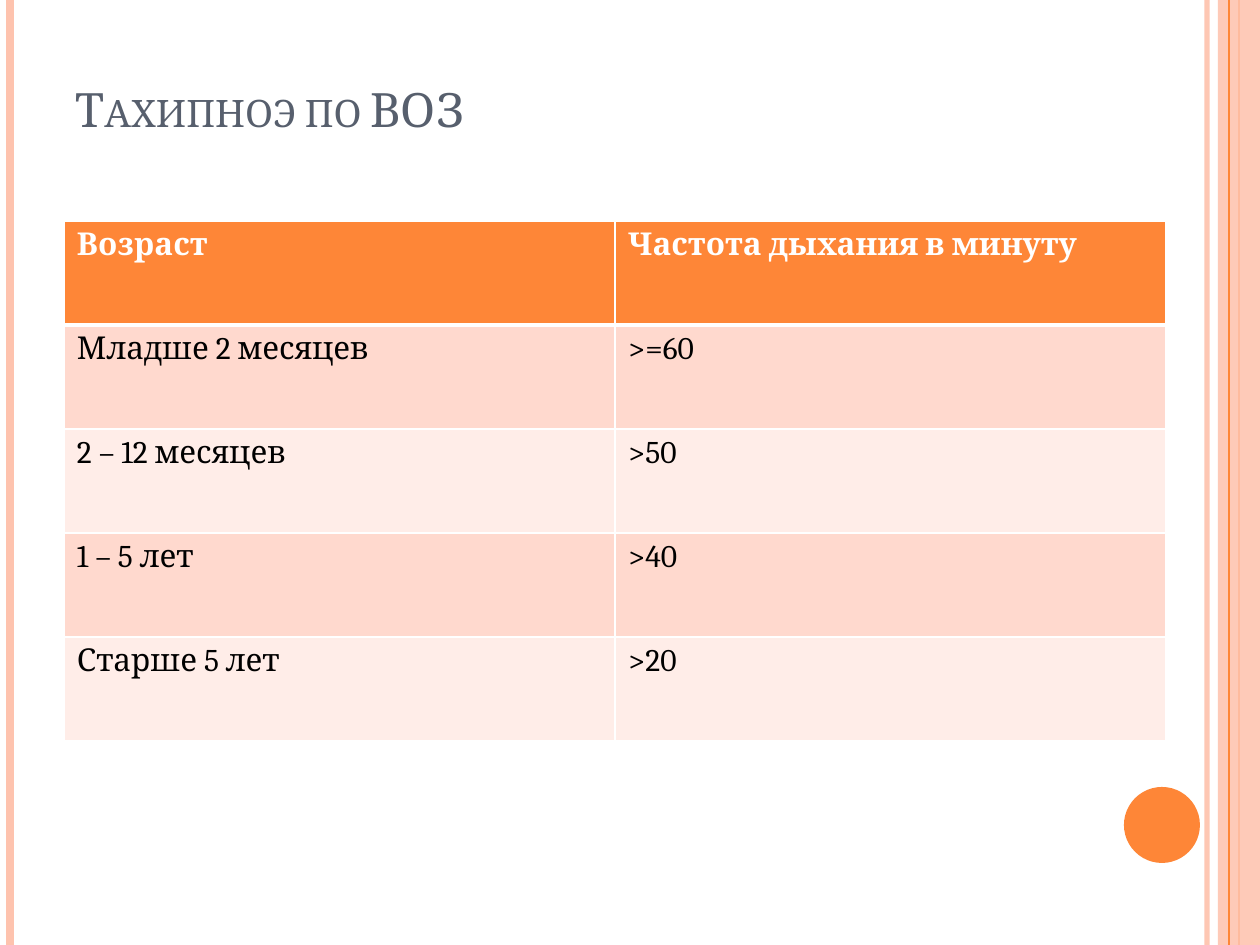
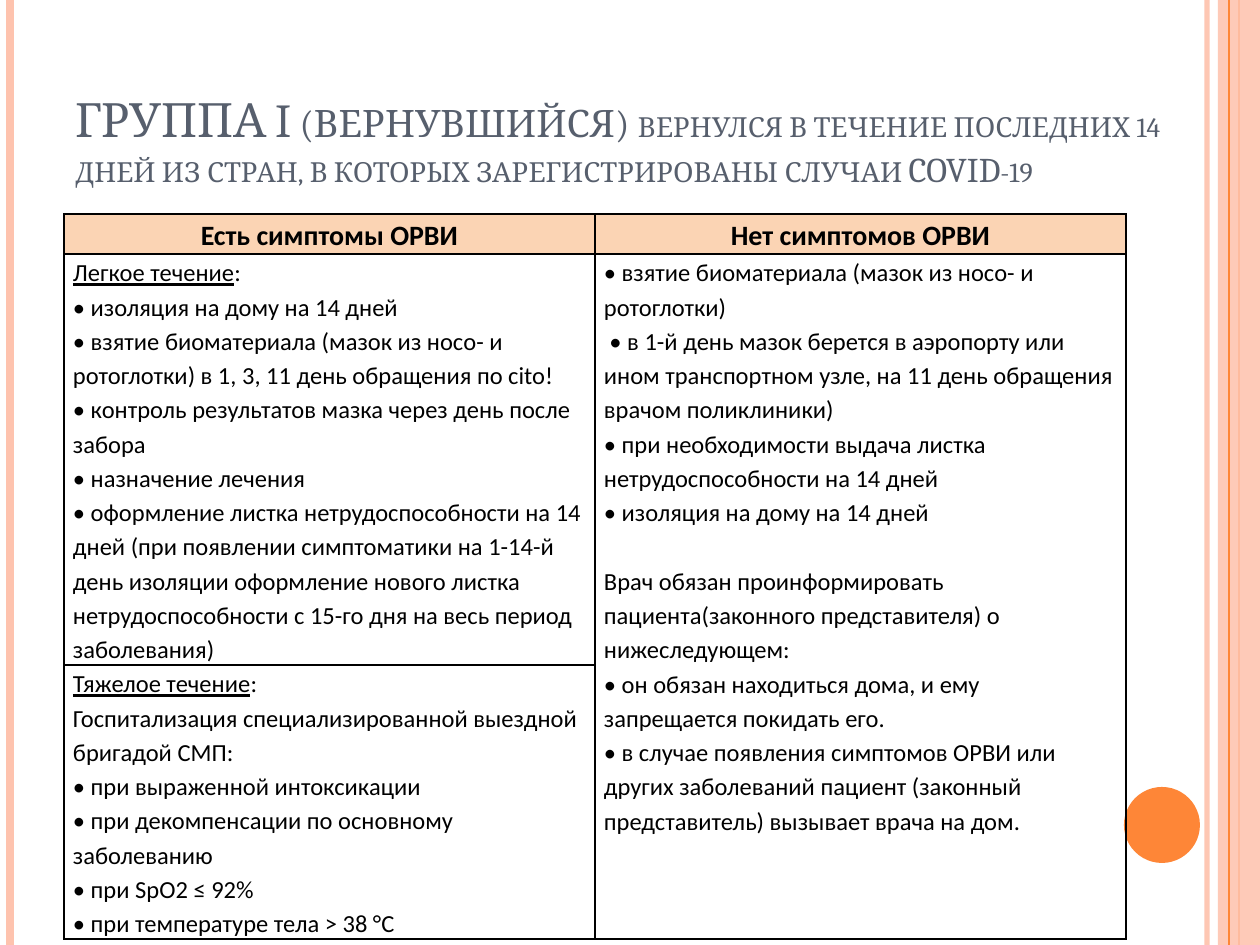
from dataclasses import dataclass
from typing import Optional

from lxml import etree
from pptx import Presentation
from pptx.dml.color import RGBColor
from pptx.enum.shapes import MSO_CONNECTOR, MSO_SHAPE
from pptx.enum.text import MSO_ANCHOR, PP_ALIGN
from pptx.oxml.ns import qn
from pptx.util import Pt

STRAIGHT = MSO_CONNECTOR.STRAIGHT
RECT, OVAL = MSO_SHAPE.RECTANGLE, MSO_SHAPE.OVAL
TOP, BOTTOM = MSO_ANCHOR.TOP, MSO_ANCHOR.BOTTOM
LEFT, CENTER = PP_ALIGN.LEFT, PP_ALIGN.CENTER
EMU_PER_PX = 914400 / 126
W, H = 1260, 945


@dataclass(frozen=True)
class Theme:
    """Colours, fonts and type sizes."""
    accent: str = "FE8637"
    blush: str = "FEC3AE"
    slate: str = "575F6D"
    white: str = "FFFFFF"
    black: str = "000000"
    sand: str = "FBD4B4"
    bands: tuple = ("FFD9CE", "FFEDE8")
    serif: str = "Cambria"
    sans: str = "Calibri"
    title: float = 27
    subtitle: float = 19.8
    rate: float = 18
    head: float = 16
    body: float = 14


T = Theme()


@dataclass(frozen=True)
class Stripe:
    """A vertical line over the full slide height."""
    x: int
    color: str
    width: float
    alpha: int = 100


@dataclass(frozen=True)
class Run:
    """A piece of title text with its size."""
    text: str
    size: float = T.title


@dataclass(frozen=True)
class Para:
    """A cell paragraph with an optional underlined lead."""
    text: str
    lead: str = ""
    before: float = 0


@dataclass(frozen=True)
class CellStyle:
    """Format of a table cell; insets are left/right and top/bottom px."""
    font: str
    size: float
    color: str
    border: str
    fill: Optional[str] = None
    bold: bool = False
    align: PP_ALIGN = LEFT
    spacing: float = 1
    inset: tuple = (13, 6)
    bottom: float = 1


STRIPES = (
    Stripe(1207, T.blush, 3, 93),
    Stripe(10, T.blush, 4.5),
    Stripe(1239, T.accent, 1.5),
)
INNER_STRIPE = Stripe(1229, T.accent, 0.75)

RATES = (
    ("Возраст", "Частота дыхания в минуту"),
    ("Младше 2 месяцев", ">=60"),
    ("2 – 12 месяцев", ">50"),
    ("1 – 5 лет", ">40"),
    ("Старше 5 лет", ">20"),
)

MILD = (
    Para(":", lead="Легкое течение"),
    Para("• изоляция на дому на 14 дней"),
    Para("• взятие биоматериала (мазок из носо- и ротоглотки) в 1, 3, 11 день обращения по cito!"),
    Para("• контроль результатов мазка через день после забора"),
    Para("• назначение лечения"),
    Para("• оформление листка нетрудоспособности на 14 дней (при появлении симптоматики "
         "на 1-14-й день изоляции оформление нового листка нетрудоспособности "
         "с 15-го дня на весь период заболевания)"),
)
SEVERE = (
    Para(":", lead="Тяжелое течение"),
    Para("Госпитализация специализированной выездной бригадой СМП:"),
    Para("• при выраженной интоксикации"),
    Para("• при декомпенсации по основному заболеванию"),
    Para("• при SpO2 ≤ 92%"),
    Para("• при температуре тела > 38 °C"),
)
NO_SYMPTOMS = (
    Para("• взятие биоматериала (мазок из носо- и ротоглотки)"),
    Para(" • в 1-й день мазок берется в аэропорту или ином транспортном узле, "
         "на 11 день обращения врачом поликлиники)"),
    Para("• при необходимости выдача листка нетрудоспособности на 14 дней"),
    Para("• изоляция на дому на 14 дней"),
    Para("Врач обязан проинформировать пациента(законного представителя) о нижеследующем:",
         before=19.6),
    Para("• он обязан находиться дома, и ему запрещается покидать его."),
    Para("• в случае появления симптомов ОРВИ или других заболеваний пациент "
         "(законный представитель) вызывает врача на дом."),
)


def px(n: float) -> int:
    """Turn px into EMU."""
    return round(n * EMU_PER_PX)


def rgb(color: str) -> RGBColor:
    """Turn a hex string into a colour."""
    return RGBColor.from_string(color)


def set_alpha(el, percent: int) -> None:
    """Make the first solid colour inside an element translucent."""
    clr = next(el.iter(qn("a:srgbClr")))
    etree.SubElement(clr, qn("a:alpha"), val=str(percent * 1000))


def add_run(p, text: str, *, font: str, size: float, color: str,
            bold: bool = False, underline: bool = False, small_caps: bool = False) -> None:
    """Append formatted text to a paragraph."""
    r = p.add_run()
    r.text = text
    r.font.name, r.font.size = font, Pt(size)
    r.font.bold, r.font.underline = bold, underline
    r.font.color.rgb = rgb(color)
    if small_caps:
        r.font._element.set("cap", "small")


def add_stripe(s, stripe: Stripe) -> None:
    """Draw a vertical stripe."""
    c = s.shapes.add_connector(STRAIGHT, px(stripe.x), 0, px(stripe.x), px(H))
    c.line.color.rgb = rgb(stripe.color)
    c.line.width = Pt(stripe.width)
    sp_pr = c._element.spPr
    if stripe.alpha < 100:
        set_alpha(sp_pr, stripe.alpha)
    etree.SubElement(sp_pr, qn("a:effectLst"))


def add_block(s, kind: MSO_SHAPE, box: tuple, color: str, alpha: int = 100) -> None:
    """Draw a filled shape without outline."""
    sp = s.shapes.add_shape(kind, *map(px, box))
    sp.shadow.inherit = False
    sp.fill.solid()
    sp.fill.fore_color.rgb = rgb(color)
    sp.line.fill.background()
    if alpha < 100:
        set_alpha(sp._element.spPr, alpha)


def add_title(s, runs: tuple, width: int, bottom_inset: int = 6) -> None:
    """Add the small-caps title anchored to the bottom of its box."""
    tf = s.shapes.add_textbox(px(63), px(38), px(width), px(157)).text_frame
    tf.word_wrap = True
    tf.vertical_anchor = BOTTOM
    tf.margin_bottom = px(bottom_inset)
    for run in runs:
        add_run(tf.paragraphs[0], run.text, font=T.serif, size=run.size,
                color=T.slate, small_caps=True)


def new_slide(prs, runs: tuple, width: int, bottom_inset: int = 6):
    """Add a slide with the shared decoration and a title."""
    s = prs.slides.add_slide(prs.slide_layouts[6])
    for stripe in STRIPES:
        add_stripe(s, stripe)
    add_block(s, RECT, (1218, 0, 42, H), T.blush, 87)
    add_stripe(s, INNER_STRIPE)
    add_block(s, OVAL, (1124, 787, 76, 76), T.accent)
    add_title(s, runs, width, bottom_inset)
    return s


def set_borders(cell, color: str, bottom: float) -> None:
    """Outline a cell with 1 pt lines and a bottom line of its own width."""
    tc_pr = cell._tc.get_or_add_tcPr()
    for i, (side, width) in enumerate(zip("LRTB", (1, 1, 1, bottom))):
        ln = etree.Element(qn(f"a:ln{side}"), w=str(Pt(width)))
        fill = etree.SubElement(ln, qn("a:solidFill"))
        etree.SubElement(fill, qn("a:srgbClr"), val=color)
        tc_pr.insert(i, ln)


def fill_cell(cell, paras: tuple, st: CellStyle) -> None:
    """Write paragraphs into a cell and format it."""
    cell.margin_left = cell.margin_right = px(st.inset[0])
    cell.margin_top = cell.margin_bottom = px(st.inset[1])
    cell.vertical_anchor = TOP
    if st.fill:
        cell.fill.solid()
        cell.fill.fore_color.rgb = rgb(st.fill)
    else:
        cell.fill.background()
    set_borders(cell, st.border, st.bottom)
    tf = cell.text_frame
    for i, para in enumerate(paras):
        p = tf.add_paragraph() if i else tf.paragraphs[0]
        p.alignment, p.line_spacing = st.align, st.spacing
        p.space_before = Pt(para.before)
        look = dict(font=st.font, size=st.size, color=st.color, bold=st.bold)
        if para.lead:
            add_run(p, para.lead, underline=True, **look)
        add_run(p, para.text, **look)


def new_table(s, top: int, col_width: int, heights: tuple):
    """Add a plain two-column table."""
    frame = s.shapes.add_table(len(heights), 2, px(64), px(top),
                               px(2 * col_width), px(sum(heights)))
    table = frame.table
    table.first_row = table.horz_banding = False
    for col in table.columns:
        col.width = px(col_width)
    for row, height in zip(table.rows, heights):
        row.height = px(height)
    return table


def build_rates(prs) -> None:
    """Build the breathing rate slide."""
    s = new_slide(prs, (Run("Тахипноэ по ВОЗ"),), 1029, 58)
    table = new_table(s, 221, 551, (104,) * len(RATES))
    for i, row in enumerate(RATES):
        if i == 0:
            st = CellStyle(T.serif, T.rate, T.white, T.white, T.accent, bold=True, bottom=3)
        else:
            st = CellStyle(T.serif, T.rate, T.black, T.white, T.bands[(i - 1) % 2])
        for j, text in enumerate(row):
            fill_cell(table.cell(i, j), (Para(text),), st)


def build_returned(prs) -> None:
    """Build the slide on returned travellers."""
    s = new_slide(prs, (
        Run("ГРУППА I (вернувшийся) "),
        Run("вернулся в течение последних 14 дней из стран, "
            "в которых зарегистрированы случаи COVID-19", T.subtitle),
    ), 1113)
    table = new_table(s, 214, 531, (40, 411, 274))
    head = CellStyle(T.sans, T.head, T.black, T.black, T.sand, bold=True,
                     align=CENTER, spacing=1.15, inset=(9, 0))
    body = CellStyle(T.sans, T.body, T.black, T.black, spacing=1.15, inset=(9, 0))
    for j, text in enumerate(("Есть симптомы ОРВИ", "Нет симптомов ОРВИ")):
        fill_cell(table.cell(0, j), (Para(text),), head)
    table.cell(1, 1).merge(table.cell(2, 1))
    fill_cell(table.cell(1, 0), MILD, body)
    fill_cell(table.cell(2, 0), SEVERE, body)
    fill_cell(table.cell(1, 1), NO_SYMPTOMS, body)
    set_borders(table.cell(2, 1), T.black, 1)


def main() -> None:
    """Build and save the presentation."""
    prs = Presentation()
    prs.slide_width, prs.slide_height = px(W), px(H)
    build_rates(prs)
    build_returned(prs)
    prs.save("out.pptx")


if __name__ == "__main__":
    main()
